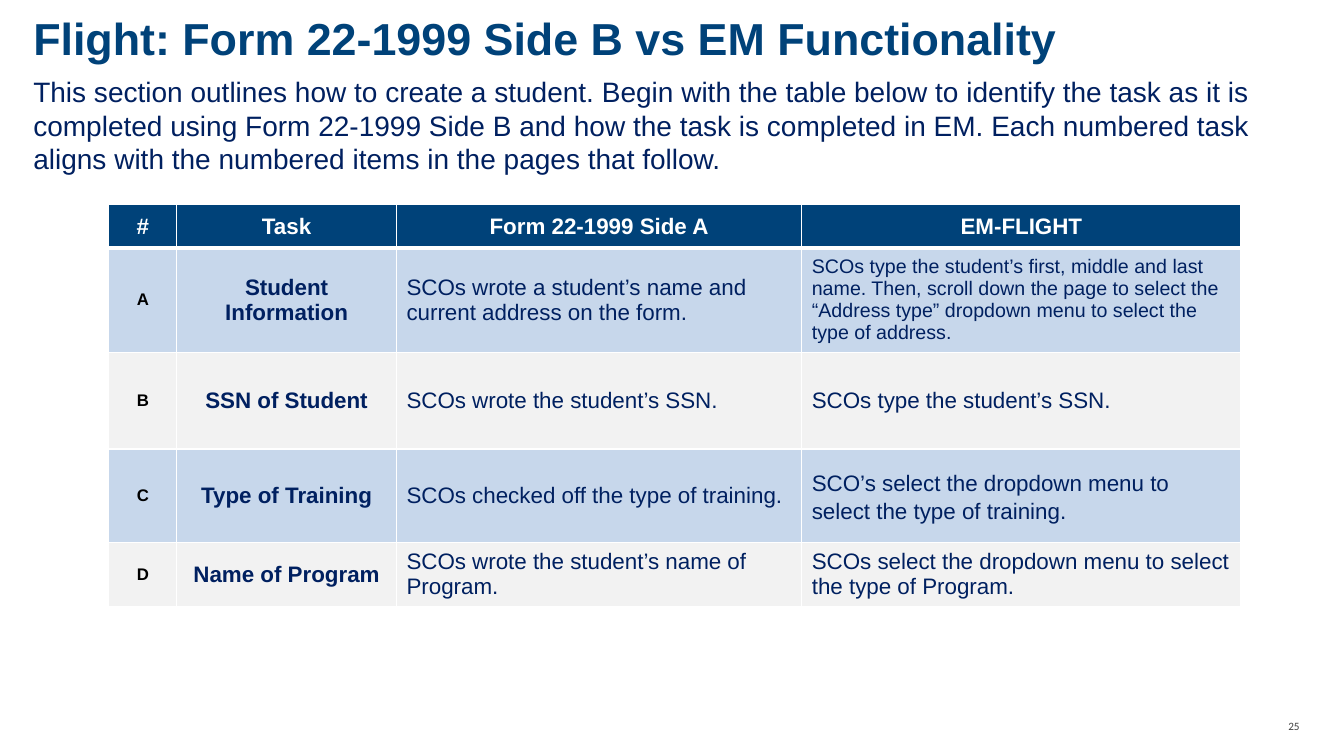
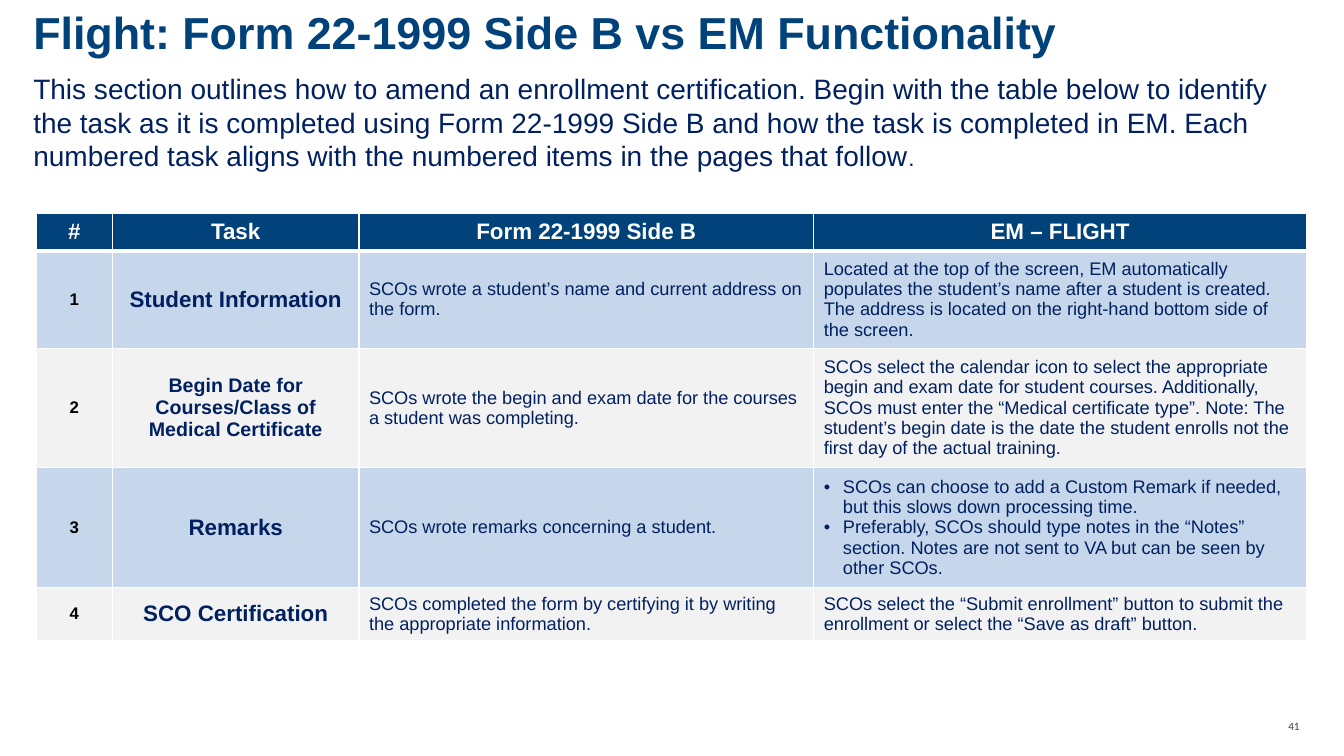
from lxml.etree import SubElement
from pptx import Presentation
from pptx.dml.color import RGBColor
from pptx.enum.text import MSO_ANCHOR, PP_ALIGN
from pptx.oxml.ns import qn
from pptx.util import Emu, Inches, Pt

COLORS = {
    "heading": "004279",
    "body": "002060",
    "number": "000000",
    "page": "404040",
    "white": "FFFFFF",
    "odd": "C7D7EB",
    "even": "F2F2F2",
}
TITLE = "Flight: Form 22-1999 Side B vs EM Functionality"
LEFT = 0.33
COLUMN_SHARES = (0.06, 0.194, 0.358, 0.388)
BULLET_INDENT = 0.19

SLIDES = [
    {
        "page": "25",
        "title_top": 0.21,
        "intro_top": 0.74,
        "intro": [
            ("This section outlines how to create a student. Begin with the table below to "
             "identify the task as it is completed using Form 22-1999 Side B and how the task "
             "is completed in EM. Each numbered task aligns with the numbered items in the "
             "pages that follow.", 20),
        ],
        "table_at": (1.08, 2.03),
        "table_width": 11.23,
        "row_heights": (0.43, 1.03, 0.96, 0.93, 0.57),
        "detail_size": 16,
        "cell_sizes": {(1, 3): 14},
        "cell_spacing": {(3, 3): 1.15},
        "rows": [
            ("#", "Task", "Form 22-1999 Side A", "EM-FLIGHT"),
            ("A", "Student Information",
             "SCOs wrote a student’s name and current address on the form.",
             "SCOs type the student’s first, middle and last name. Then, scroll down the page "
             "to select the “Address type” dropdown menu to select the type of address."),
            ("B", "SSN of Student", "SCOs wrote the student’s SSN.",
             "SCOs type the student’s SSN."),
            ("C", "Type of Training", "SCOs checked off the type of training.",
             "SCO’s select the dropdown menu to select the type of training."),
            ("D", "Name of Program", "SCOs wrote the student’s name of Program.",
             "SCOs select the dropdown menu to select the type of Program."),
        ],
    },
    {
        "page": "41",
        "title_top": 0.15,
        "intro_top": 0.71,
        "intro": [
            ("This section outlines how to amend an enrollment certification. Begin with the "
             "table below to identify the task as it is completed using Form 22-1999 Side B "
             "and how the task is completed in EM. Each numbered task aligns with the numbered "
             "items in the pages that follow", 20),
            (".", 16),
        ],
        "table_at": (0.36, 2.12),
        "table_width": 12.6,
        "row_heights": (0.34, 0.91, 1.11, 1.11, 0.5),
        "detail_size": 13,
        "cell_sizes": {(2, 1): 14},
        "cell_spacing": {},
        "rows": [
            ("#", "Task", "Form 22-1999 Side B", "EM – FLIGHT"),
            ("1", "Student Information",
             "SCOs wrote a student’s name and current address on the form.",
             "Located at the top of the screen, EM automatically populates the student’s name "
             "after a student is created. The address is located on the right-hand bottom side "
             "of the screen."),
            ("2", "Begin Date for Courses/Class of Medical Certificate",
             "SCOs wrote the begin and exam date for the courses a student was completing.",
             "SCOs select the calendar icon to select the appropriate begin and exam date for "
             "student courses. Additionally, SCOs must enter the “Medical certificate type”. "
             "Note: The student’s begin date is the date the student enrolls not the first day "
             "of the actual training."),
            ("3", "Remarks", "SCOs wrote remarks concerning a student.",
             ["SCOs can choose to add a Custom Remark if needed, but this slows down "
              "processing time.",
              "Preferably, SCOs should type notes in the “Notes” section. Notes are not sent "
              "to VA but can be seen by other SCOs."]),
            ("4", "SCO Certification",
             "SCOs completed the form by certifying it by writing the appropriate information.",
             "SCOs select the “Submit enrollment” button to submit the enrollment or select "
             "the “Save as draft” button."),
        ],
    },
]


def color(name):
    return RGBColor.from_string(COLORS[name])


def style(font, size, color_name, bold=False, face="Arial"):
    font.name, font.size, font.bold = face, Pt(size), bold
    font.color.rgb = color(color_name)


def add_text(slide, left, top, width, height, anchor=MSO_ANCHOR.TOP):
    frame = slide.shapes.add_textbox(*map(Inches, (left, top, width, height))).text_frame
    frame.margin_left = frame.margin_top = frame.margin_right = frame.margin_bottom = 0
    frame.word_wrap = True
    frame.vertical_anchor = anchor
    return frame.paragraphs[0]


def add_borders(cell, row):
    properties = cell._tc.get_or_add_tcPr()
    widths = {"L": 1, "R": 1, "T": 3 if row == 1 else 1, "B": 3 if row == 0 else 1}
    for side, width in widths.items():
        line = SubElement(properties, qn(f"a:ln{side}"), w=str(Pt(width)))
        fill = SubElement(line, qn("a:solidFill"))
        SubElement(fill, qn("a:srgbClr"), val=COLORS["white"])


def add_bullet(paragraph):
    properties = paragraph._p.get_or_add_pPr()
    properties.set("marL", str(Inches(BULLET_INDENT)))
    properties.set("indent", str(-Inches(BULLET_INDENT)))
    SubElement(properties, qn("a:buFont"), typeface="Arial")
    SubElement(properties, qn("a:buChar"), char="•")


def fill_cell(cell, row, column, content, page):
    add_borders(cell, row)
    cell.fill.solid()
    cell.fill.fore_color.rgb = color("heading" if row == 0 else "odd" if row % 2 else "even")
    cell.vertical_anchor = MSO_ANCHOR.MIDDLE
    if row == 0:
        size, ink = 16, "white"
    else:
        size = (12, 16, page["detail_size"], page["detail_size"])[column]
        ink = "number" if column == 0 else "body"
    size = page["cell_sizes"].get((row, column), size)
    bulleted = isinstance(content, list)
    cell.text = "\n".join(content) if bulleted else content
    for paragraph in cell.text_frame.paragraphs:
        paragraph.line_spacing = page["cell_spacing"].get((row, column))
        if bulleted:
            add_bullet(paragraph)
        heading = row == 0 or column < 2
        paragraph.alignment = PP_ALIGN.CENTER if heading else PP_ALIGN.LEFT
        style(paragraph.font, size, ink, heading)


def add_task_table(slide, page):
    rows, heights = page["rows"], page["row_heights"]
    left, top = page["table_at"]
    width = Inches(page["table_width"])
    table = slide.shapes.add_table(
        len(rows), len(COLUMN_SHARES), Inches(left), Inches(top), width, Inches(sum(heights))
    ).table
    for column, share in zip(table.columns, COLUMN_SHARES):
        column.width = Emu(round(width * share))
    for row, (contents, height) in enumerate(zip(rows, heights)):
        table.rows[row].height = Inches(height)
        for column, content in enumerate(contents):
            fill_cell(table.cell(row, column), row, column, content, page)


def build_slide(deck, page):
    slide = deck.slides.add_slide(deck.slide_layouts[6])

    number = add_text(slide, 12.47, 7.09, 0.42, 0.23, MSO_ANCHOR.MIDDLE)
    number.text = page["page"]
    number.alignment = PP_ALIGN.RIGHT
    style(number.font, 8, "page", face="Calibri")

    title = add_text(slide, LEFT, page["title_top"], 10.79, 0.4)
    title.text = TITLE
    title.line_spacing = 0.8
    style(title.font, 32, "heading", True)

    intro = add_text(slide, LEFT, page["intro_top"], 12.55, 0.98)
    for text, size in page["intro"]:
        run = intro.add_run()
        run.text = text
        style(run.font, size, "body")

    add_task_table(slide, page)


def main():
    deck = Presentation()
    deck.slide_width, deck.slide_height = Inches(13.33), Inches(7.5)
    for page in SLIDES:
        build_slide(deck, page)
    deck.save("out.pptx")


if __name__ == "__main__":
    main()
